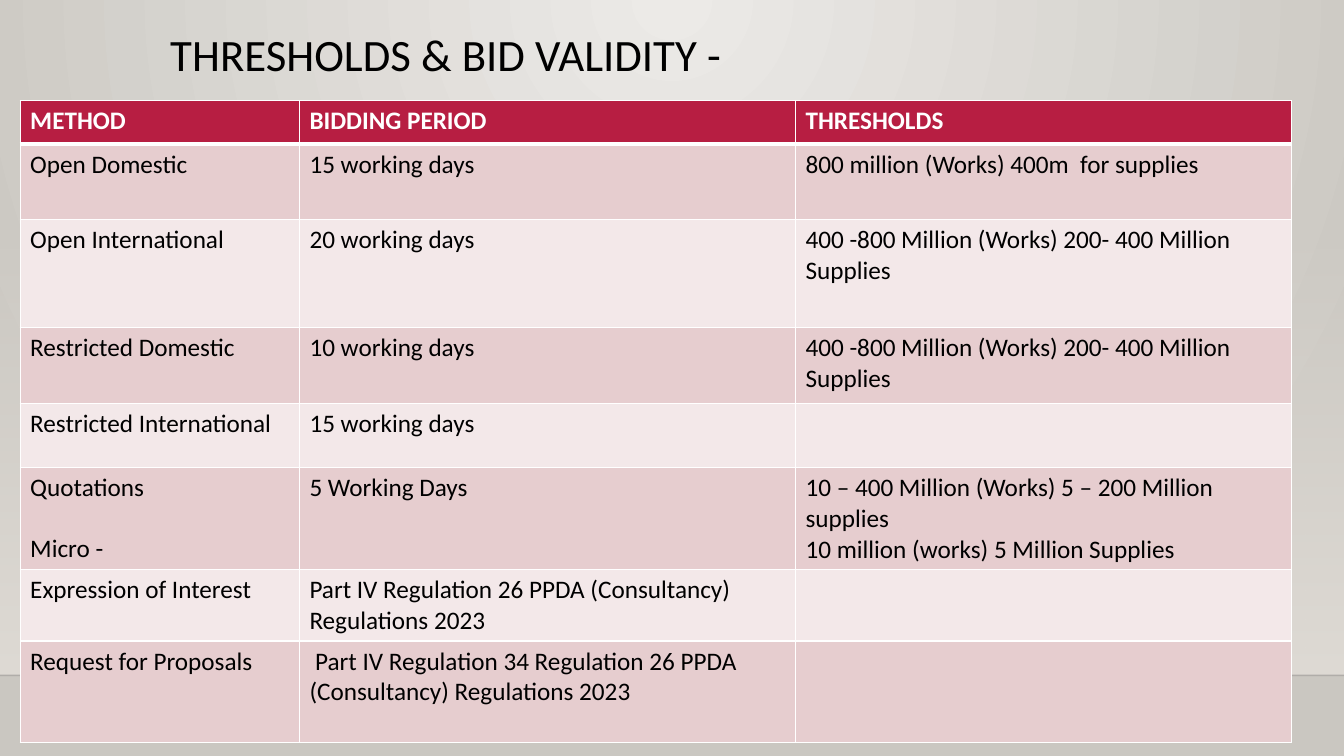
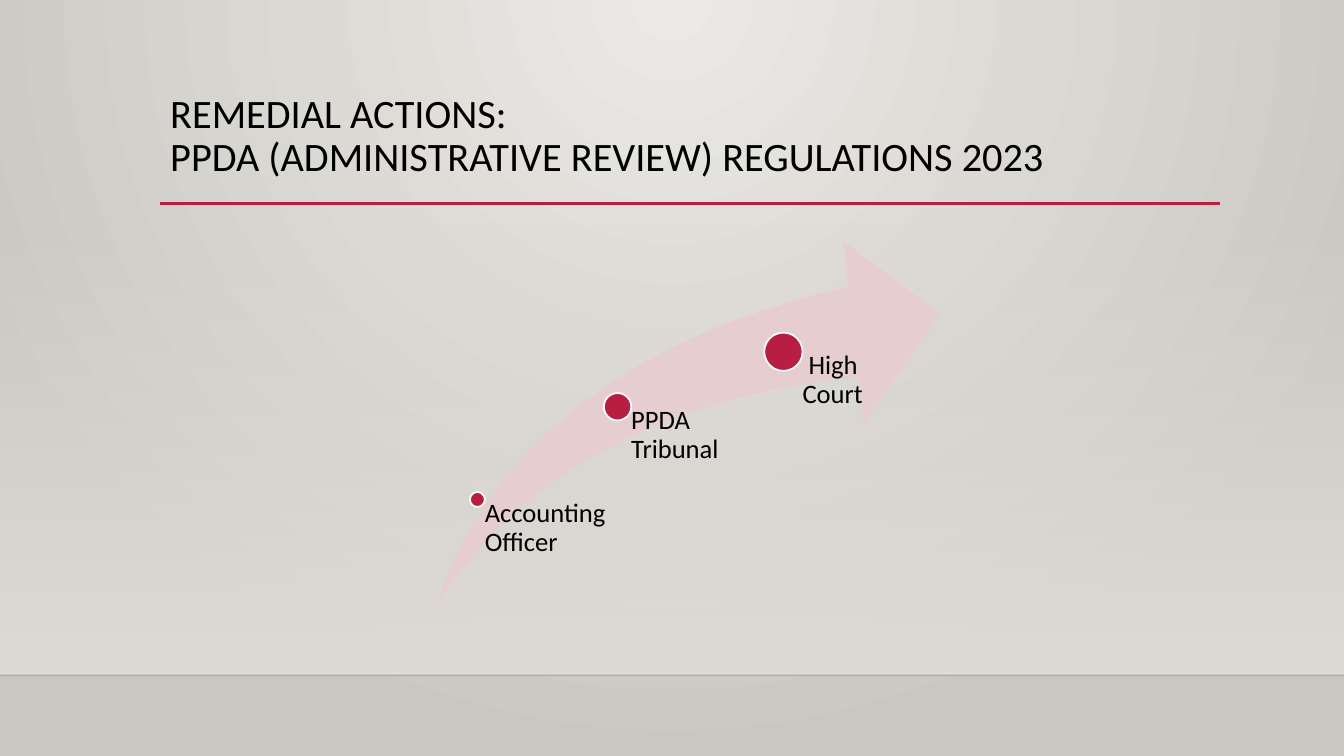
"""Builds two slides on procurement thresholds and remedial actions."""
from dataclasses import dataclass

from lxml.etree import SubElement
from pptx import Presentation
from pptx.dml.color import RGBColor
from pptx.enum.shapes import MSO_CONNECTOR as CONN, MSO_SHAPE as SHAPE
from pptx.enum.text import MSO_ANCHOR as ANCHOR
from pptx.oxml import parse_xml
from pptx.oxml.ns import nsdecls, qn
from pptx.util import Inches, Pt

WIDTH, HEIGHT = Inches(13.33), Inches(7.5)


@dataclass(frozen=True)
class Theme:
    font: str = "Calibri"
    ink: str = "000000"
    accent: str = "B71E42"
    white: str = "FFFFFF"
    tints: tuple = ("E6CDCF", "F3E8E9")
    backdrop: tuple = ("ECEAE7", "CAC7C1")
    wall: str = "DFDBD5"
    floor_line: str = "000001"
    title_size: float = 32
    long_title_size: float = 28.8
    cell_size: float = 18
    label_size: float = 19
    cell_gap: float = 21.5


T = Theme()
LEFT, RIGHT = 11.93, 90.77
RULE_Y, WALL_TOP, FLOOR = 26.93, 29.47, 89.33

COLUMNS = (20.78, 36.91, 36.91)
ROWS = (5.73, 10, 14.27, 10, 8.53, 13.47, 9.47, 13.47)
SHARED_LIMIT = "400 -800 Million (Works) 200- 400 Million Supplies"
METHODS = (
    ("METHOD", "BIDDING PERIOD", "THRESHOLDS"),
    ("Open Domestic", "15 working days", "800 million (Works) 400m  for supplies"),
    ("Open International", "20 working days", SHARED_LIMIT),
    ("Restricted Domestic", "10 working days", SHARED_LIMIT),
    ("Restricted International", "15 working days", ""),
    ("Quotations\nMicro -", "5 Working Days",
     "10 – 400 Million (Works) 5 – 200 Million supplies\n"
     "10 million (works) 5 Million Supplies"),
    ("Expression of Interest",
     "Part IV Regulation 26 PPDA (Consultancy) Regulations 2023", ""),
    ("Request for Proposals",
     " Part IV Regulation 34 Regulation 26 PPDA (Consultancy) Regulations 2023", ""),
)

ARROW = (32.48, 31.87, 37.43, 48.13)
LABEL_WIDTH = 10.13
REVIEW_STEPS = (
    ("Accounting Officer", 35.52, 66.07, 1.12),
    ("PPDA Tribunal", 45.95, 53.8, 2.04),
    (" High Court", 58.29, 46.53, 2.85),
)


def across(share):
    """Turn a percentage of the slide's width into a length."""
    return round(WIDTH * share / 100)


def down(share):
    """Turn a percentage of the slide's height into a length."""
    return round(HEIGHT * share / 100)


def place(x, y, w, h):
    """Turn four percentages into left, top, width and height."""
    return across(x), down(y), across(w), down(h)


def rgb(code):
    """Read a hexadecimal colour."""
    return RGBColor.from_string(code)


def style(p, size, color=T.ink, bold=False):
    """Set the font of a paragraph."""
    f = p.font
    f.name, f.size, f.bold = T.font, Pt(size), bold
    f.color.rgb = rgb(color)


def set_gradient(fill, owner, stops, direction):
    """Give a fill a two-stop gradient; each stop is a colour and an opacity."""
    fill.gradient()
    old = owner.find(".//" + qn("a:gradFill"))
    marks = "".join(
        f'<a:gs pos="{i * 100000}"><a:srgbClr val="{color}">'
        f'<a:alpha val="{opacity * 1000}"/></a:srgbClr></a:gs>'
        for i, (color, opacity) in enumerate(stops))
    old.getparent().replace(old, parse_xml(
        f'<a:gradFill {nsdecls("a")} rotWithShape="1">'
        f'<a:gsLst>{marks}</a:gsLst>{direction}</a:gradFill>'))


def add_line(s, x1, x2, y, color, weight, opacity=100):
    """Draw a horizontal line."""
    line = s.shapes.add_connector(CONN.STRAIGHT, across(x1), down(y), across(x2), down(y))
    line.line.color.rgb, line.line.width = rgb(color), Pt(weight)
    pr = line._element.spPr
    SubElement(pr.find(".//" + qn("a:srgbClr")), qn("a:alpha"), val=str(opacity * 1000))
    SubElement(pr, qn("a:effectLst"))


def add_plain(s, kind, box, color, outline=None):
    """Draw a flat preset shape."""
    sp = s.shapes.add_shape(kind, *box)
    sp.shadow.inherit = False
    sp.fill.solid()
    sp.fill.fore_color.rgb = rgb(color)
    if outline:
        sp.line.color.rgb, sp.line.width = rgb(outline), Pt(1.25)
    else:
        sp.line.fill.background()
    return sp


def add_text(s, box, text, size):
    """Add a wrapped, top-anchored text box and return its frame."""
    tf = s.shapes.add_textbox(*box).text_frame
    tf.word_wrap, tf.vertical_anchor = True, ANCHOR.TOP
    tf.text = text
    p = tf.paragraphs[0]
    p.line_spacing = 0.9
    style(p, size)
    return tf


def add_base(prs, title, top, height, size):
    """Add a slide with the shared backdrop, rules and title."""
    s = prs.slides.add_slide(prs.slide_layouts[6])
    set_gradient(s.background.fill, s._element, [(c, 100) for c in T.backdrop],
                 '<a:path path="circle"><a:fillToRect l="43000" r="43000" b="100000"/></a:path>')
    wall = add_plain(s, SHAPE.RECTANGLE, place(0, WALL_TOP, 100, FLOOR - WALL_TOP), T.wall)
    set_gradient(wall.fill, wall._element, ((T.wall, 0), (T.wall, 100)),
                 '<a:lin ang="5400000" scaled="0"/>')
    add_line(s, 0, 100, FLOOR, T.floor_line, 1, 20)
    add_line(s, LEFT, RIGHT, RULE_Y, T.accent, 2.5)
    add_text(s, place(LEFT, top, RIGHT - LEFT, height), title, size)
    return s


def set_borders(cell, bottom):
    """Give a cell white borders, with its own bottom weight."""
    pr = cell._tc.get_or_add_tcPr()
    for i, (side, weight) in enumerate(zip("LRTB", (1, 1, 1, bottom))):
        pr.insert(i, parse_xml(
            f'<a:ln{side} {nsdecls("a")} w="{Pt(weight)}"><a:solidFill>'
            f'<a:srgbClr val="{T.white}"/></a:solidFill></a:ln{side}>'))


def fill_cell(cell, text, row, column):
    """Write and colour one table cell."""
    header = row == 0
    cell.text = text
    for i, p in enumerate(cell.text_frame.paragraphs):
        if i and column == 0:
            p.space_before = Pt(T.cell_gap)
        style(p, T.cell_size, T.white if header else T.ink, header)
    cell.fill.solid()
    cell.fill.fore_color.rgb = rgb(T.accent if header else T.tints[(row - 1) % 2])
    set_borders(cell, 3 if header else 1)


def add_grid(s, x, y, columns, rows, content):
    """Add a table whose columns and rows are shares of the slide."""
    box = place(x, y, sum(columns), sum(rows))
    table = s.shapes.add_table(len(rows), len(columns), *box).table
    for column, share in zip(table.columns, columns):
        column.width = across(share)
    for row, share in zip(table.rows, rows):
        row.height = down(share)
    for r, texts in enumerate(content):
        for c, text in enumerate(texts):
            fill_cell(table.cell(r, c), text, r, c)


def add_step(s, text, x, y, size, bottom):
    """Add a dot centred at a point, with its label hanging from the centre."""
    d = across(size)
    dot = (across(x) - d // 2, down(y) - d // 2, d, d)
    add_plain(s, SHAPE.OVAL, dot, T.accent, T.white)
    tf = add_text(s, place(x, y, LABEL_WIDTH, bottom - y), text, T.label_size)
    tf.margin_left = d // 2
    tf.margin_top = tf.margin_right = tf.margin_bottom = 0


def add_rising_steps(s, arrow, steps):
    """Add a swoosh arrow with steps along it."""
    swoosh = add_plain(s, SHAPE.SWOOSH_ARROW, place(*arrow), T.tints[0])
    swoosh.adjustments[0] = swoosh.adjustments[1] = 0.25
    for step in steps:
        add_step(s, *step, bottom=arrow[1] + arrow[3])


def main():
    """Build and save the presentation."""
    prs = Presentation()
    prs.slide_width, prs.slide_height = WIDTH, HEIGHT
    s = add_base(prs, "THRESHOLDS & BID VALIDITY -", 3.73, 8, T.title_size)
    add_grid(s, 1.5, 13.33, COLUMNS, ROWS, METHODS)
    s = add_base(prs, "REMEDIAL ACTIONS:\vPPDA (ADMINISTRATIVE REVIEW) REGULATIONS 2023",
                 11.73, 15.33, T.long_title_size)
    add_rising_steps(s, ARROW, REVIEW_STEPS)
    prs.save("out.pptx")


if __name__ == "__main__":
    main()
